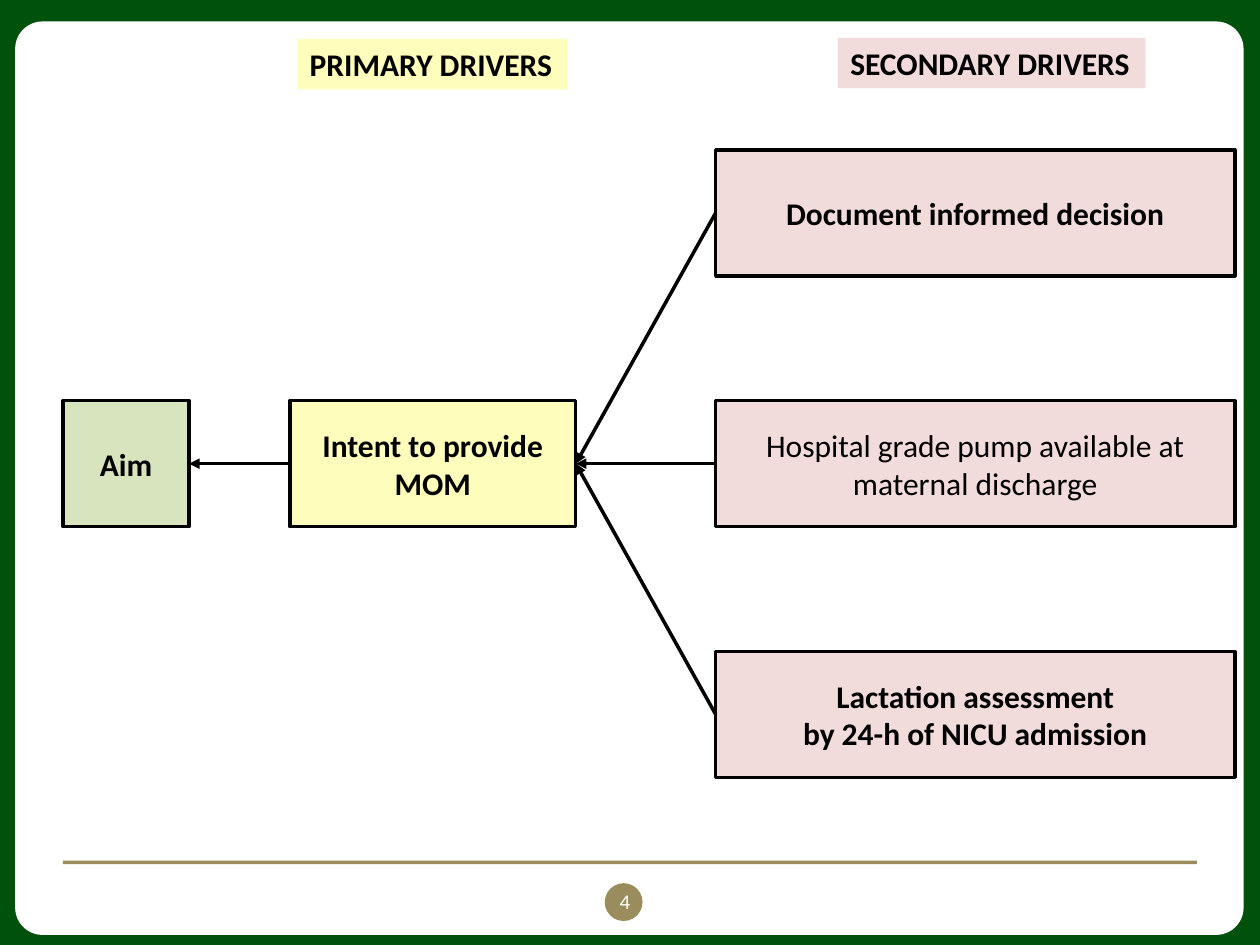
"""Build a driver diagram slide linking an aim to its primary and secondary drivers."""
from lxml import etree
from pptx import Presentation
from pptx.dml.color import RGBColor
from pptx.enum.shapes import MSO_CONNECTOR, MSO_SHAPE
from pptx.enum.text import MSO_ANCHOR, MSO_AUTO_SIZE, PP_ALIGN
from pptx.oxml.ns import qn
from pptx.util import Inches, Pt

COLORS = {
    "frame": "00510B",
    "white": "FFFFFF",
    "black": "000000",
    "accent": "9A8C5C",
    "aim": "D7E4BD",
    "primary": "FFFDBB",
    "secondary": "F2DCDB",
}


def add_block(kind, left, top, width, height, color, outlined=False):
    shape = slide.shapes.add_shape(
        kind, Inches(left), Inches(top), Inches(width), Inches(height)
    )
    shape.shadow.inherit = False
    shape.fill.solid()
    shape.fill.fore_color.rgb = RGBColor.from_string(COLORS[color])
    if outlined:
        shape.line.color.rgb = RGBColor.from_string(COLORS["black"])
        shape.line.width = Pt(2)
    else:
        shape.line.fill.background()
    return shape


def write_text(shape, text, size=18, bold=True, color="black", align=PP_ALIGN.CENTER):
    shape.text_frame.text = text
    for paragraph in shape.text_frame.paragraphs:
        paragraph.alignment = align
        for run in paragraph.runs:
            run.font.name = "Calibri"
            run.font.size = Pt(size)
            run.font.bold = bold
            run.font.color.rgb = RGBColor.from_string(COLORS[color])


presentation = Presentation()
presentation.slide_width = Inches(10)
presentation.slide_height = Inches(7.5)
slide = presentation.slides.add_slide(presentation.slide_layouts[6])
slide.background.fill.solid()
slide.background.fill.fore_color.rgb = RGBColor.from_string(COLORS["frame"])

panel = add_block(MSO_SHAPE.ROUNDED_RECTANGLE, 0.12, 0.17, 9.75, 7.25, "white")
panel.adjustments[0] = 0.03
add_block(MSO_SHAPE.OVAL, 4.8, 7.01, 0.3, 0.3, "accent")
add_block(MSO_SHAPE.RECTANGLE, 0.5, 6.83, 9, 0.03, "accent")

page_number = slide.shapes.add_textbox(Inches(4.75), Inches(7), Inches(0.42), Inches(0.35))
page_number.text_frame.word_wrap = True
write_text(page_number, "4", size=12, bold=False, color="white")

middle_top = 3.18
row_step = 1.99
boxes = [
    ("Aim", 0.5, 0, 1, "aim", True),
    ("Intent to provide MOM", 2.3, 0, 2.27, "primary", True),
    ("Document informed decision", 5.68, -1, 4.12, "secondary", True),
    ("Hospital grade pump available at maternal discharge", 5.68, 0, 4.12, "secondary", False),
    ("Lactation assessment\nby 24-h of NICU admission", 5.68, 1, 4.12, "secondary", True),
]
drawn_boxes = []
for text, left, row, width, color, bold in boxes:
    top = middle_top + row * row_step
    box = add_block(MSO_SHAPE.RECTANGLE, left, top, width, 1, color, outlined=True)
    box.text_frame.word_wrap = True
    box.text_frame.vertical_anchor = MSO_ANCHOR.MIDDLE
    write_text(box, text, bold=bold)
    drawn_boxes.append(box)

headings = [
    ("PRIMARY DRIVERS", 2.36, 0.31, 2.14, "primary"),
    ("SECONDARY DRIVERS", 6.65, 0.3, 2.44, "secondary"),
]
for text, left, top, width, color in headings:
    heading = add_block(MSO_SHAPE.RECTANGLE, left, top, width, 0.4, color)
    heading.text_frame.word_wrap = False
    heading.text_frame.auto_size = MSO_AUTO_SIZE.SHAPE_TO_FIT_TEXT
    heading.text_frame.vertical_anchor = MSO_ANCHOR.TOP
    write_text(heading, text, align=PP_ALIGN.LEFT)

aim, primary, *secondary_drivers = drawn_boxes
links = [(primary, aim)] + [(driver, primary) for driver in secondary_drivers]
for source, target in links:
    connector = slide.shapes.add_connector(MSO_CONNECTOR.STRAIGHT, 0, 0, 0, 0)
    connector.begin_connect(source, 1)
    connector.end_connect(target, 3)
    connector.line.color.rgb = RGBColor.from_string(COLORS["black"])
    connector.line.width = Pt(2)
    etree.SubElement(connector.line._get_or_add_ln(), qn("a:tailEnd"), type="triangle")
    etree.SubElement(connector._element.spPr, qn("a:effectLst"))

presentation.save("out.pptx")
